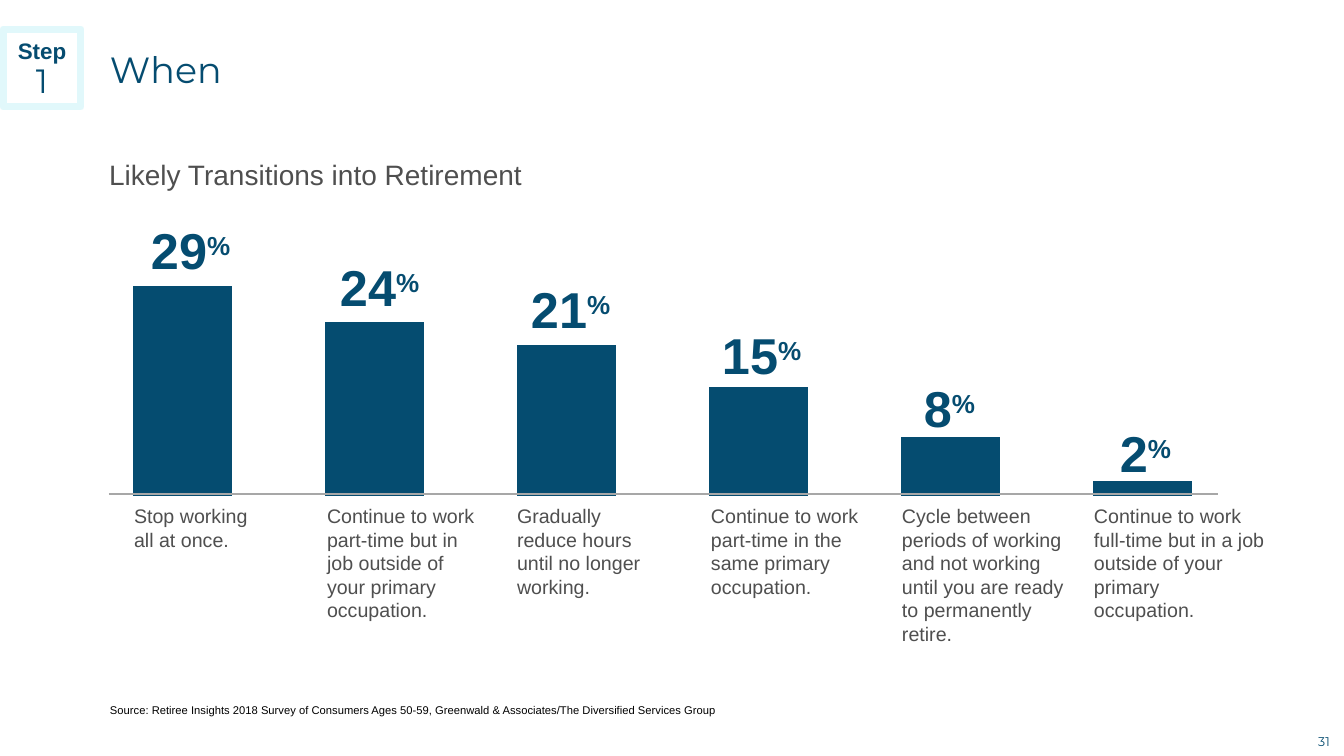
"""Build the slide on likely transitions into retirement."""
import pptx
import pptx.chart.data
import pptx.dml.color
import pptx.enum.chart
import pptx.enum.shapes
import pptx.enum.text
import pptx.oxml
import pptx.oxml.ns
import pptx.util

RGB = pptx.dml.color.RGBColor
NAVY = RGB(0x05, 0x4C, 0x70)
GREY = RGB(0x4F, 0x4F, 0x4F)
RULE = RGB(0xA7, 0xA7, 0xA7)
PALE = RGB(0xE1, 0xF8, 0xFB)
WHITE = RGB(255, 255, 255)
BLACK = RGB(0, 0, 0)
TOP = pptx.enum.text.MSO_ANCHOR.TOP
MID = pptx.enum.text.MSO_ANCHOR.MIDDLE
BASE = pptx.enum.text.MSO_ANCHOR.BOTTOM
CENTER = pptx.enum.text.PP_ALIGN.CENTER
Pt = pptx.util.Pt

PX = 12192000 / 1344
FONTS = {
    "page": dict(name="Montserrat", size=Pt(9), color=NAVY),
    "title": dict(name="Montserrat", size=Pt(26), color=NAVY),
    "head": dict(name="Arial", size=Pt(20), color=GREY),
    "source": dict(name="Arial", size=Pt(8), color=BLACK),
    "label": dict(name="Arial", size=Pt(14), color=GREY),
    "number": dict(name="Arial", size=Pt(36), color=NAVY, bold=True),
    "sign": dict(name="Arial", size=Pt(32), color=NAVY, bold=True),
    "step": dict(name="Arial", size=Pt(16), color=NAVY, bold=True),
    "count": dict(name="Montserrat", size=Pt(24), color=NAVY, bold=False),
}
TEXTS = [
    ("31", "page", (1307, 729, 34, 25), MID, dict(alignment=CENTER)),
    ("Source: Retiree Insights 2018 Survey of Consumers Ages 50-59, "
     "Greenwald & Associates/The Diversified Services Group",
     "source", (110, 667, 1125, 50), BASE, {}),
    ("When", "title", (110, 28, 1125, 82), MID, {}),
    ("Likely Transitions into Retirement", "head",
     (109, 147, 1132, 50), TOP, dict(line_spacing=1.3)),
]
BARS = [
    (100, "29", (151, 219), "Stop working all at once.", (134, 134)),
    (83, "24", (340, 256), "Continue to work part-time but in job outside "
     "of your primary occupation.", (327, 148)),
    (72, "21", (531, 278), "Gradually reduce hours until no longer working.",
     (517, 128)),
    (52, "15", (722, 324), "Continue to work part-time in the same primary "
     "occupation.", (711, 158)),
    (28, "8", (924, 377), "Cycle between periods of working and not working"
     "\vuntil you are ready to permanently retire.", (902, 181)),
    (7, "2", (1120, 422), "Continue to work full-time but in a job outside "
     "of your primary occupation.", (1094, 171)),
]
STEP = [("Step", "step"), ("1", "count")]
PLOT = dict(layoutTarget="inner", xMode="edge", yMode="edge",
            x=0.014, y=0, w=0.973, h=1)


def px(*nums):
    return [round(n * PX) for n in nums]


def style(font, key):
    for name, value in FONTS[key].items():
        if name == "color":
            font.color.rgb = value
        else:
            setattr(font, name, value)


def frame(shape, anchor, top=0):
    form = dict(word_wrap=True, vertical_anchor=anchor, margin_left=0,
                margin_right=0, margin_top=px(top)[0], margin_bottom=0)
    for name, value in form.items():
        setattr(shape.text_frame, name, value)
    return shape.text_frame


def write(slide, text, key, box, anchor=TOP, form={}):
    para = frame(slide.shapes.add_textbox(*px(*box)), anchor).paragraphs[0]
    for name, value in form.items():
        setattr(para, name, value)
    para.text = text
    for run in para.runs:
        style(run.font, key)
    return para


def draw_chart(slide):
    data = pptx.chart.data.CategoryChartData()
    data.categories = [str(n + 1) for n in range(len(BARS))]
    data.add_series("Series 1", [bar[0] for bar in BARS])
    kind = pptx.enum.chart.XL_CHART_TYPE.COLUMN_STACKED
    chart = slide.shapes.add_chart(kind, *px(70, 244, 1184, 252), data).chart
    chart.has_legend = chart.has_title = False
    chart.font.name, chart.font.size = "Arial", Pt(10)
    chart.font.color.rgb = BLACK
    axis = chart.value_axis
    axis.minimum_scale, axis.maximum_scale = 0, 120
    axis.has_major_gridlines = False
    axis.visible = chart.category_axis.visible = False
    plot = chart.plots[0]
    plot.gap_width, plot.overlap, plot.vary_by_categories = 95, 100, False
    fill = plot.series[0].format.fill
    fill.solid()
    fill.fore_color.rgb = NAVY
    area = chart.element.find(".//" + pptx.oxml.ns.qn("c:plotArea"))
    for old in area.findall(pptx.oxml.ns.qn("c:layout")):
        area.remove(old)
    parts = "".join(f'<c:{k} val="{v}"/>' for k, v in PLOT.items())
    area.insert(0, pptx.oxml.parse_xml(
        f'<c:layout {pptx.oxml.ns.nsdecls("c")}><c:manualLayout>{parts}'
        '</c:manualLayout></c:layout>'))


def draw_rule(slide):
    line = slide.shapes.add_connector(
        pptx.enum.shapes.MSO_CONNECTOR.STRAIGHT, *px(109, 494, 1218, 494))
    line.line.color.rgb = RULE
    line.line.width = Pt(0.75)
    line.element.spPr.append(
        pptx.oxml.parse_xml(f'<a:effectLst {pptx.oxml.ns.nsdecls("a")}/>'))


def draw_step(slide):
    box = slide.shapes.add_shape(
        pptx.enum.shapes.MSO_SHAPE.RECTANGLE, *px(3, 29, 78, 78))
    box.shadow.inherit = False
    box.fill.solid()
    box.fill.fore_color.rgb = WHITE
    box.line.color.rgb = PALE
    box.line.width = Pt(5)
    body = frame(box, MID, 5)
    body.text = "\n".join(text for text, key in STEP)
    for para, (text, key) in zip(body.paragraphs, STEP):
        para.alignment, para.line_spacing = CENTER, 0.9
        style(para.runs[0].font, key)


def main():
    deck = pptx.Presentation()
    deck.slide_width, deck.slide_height = px(1344, 756)
    slide = deck.slides.add_slide(deck.slide_layouts[6])
    for item in TEXTS:
        write(slide, *item)
    draw_chart(slide)
    draw_rule(slide)
    for share, number, spot, label, (left, width) in BARS:
        para = write(slide, number, "number", (*spot, 101, 61))
        sign = para.add_run()
        sign.text = "%"
        style(sign.font, "sign")
        sign.font._element.set("baseline", "30000")
        write(slide, label, "label", (left, 504, width, 142))
    draw_step(slide)
    deck.save("out.pptx")


if __name__ == "__main__":
    main()
